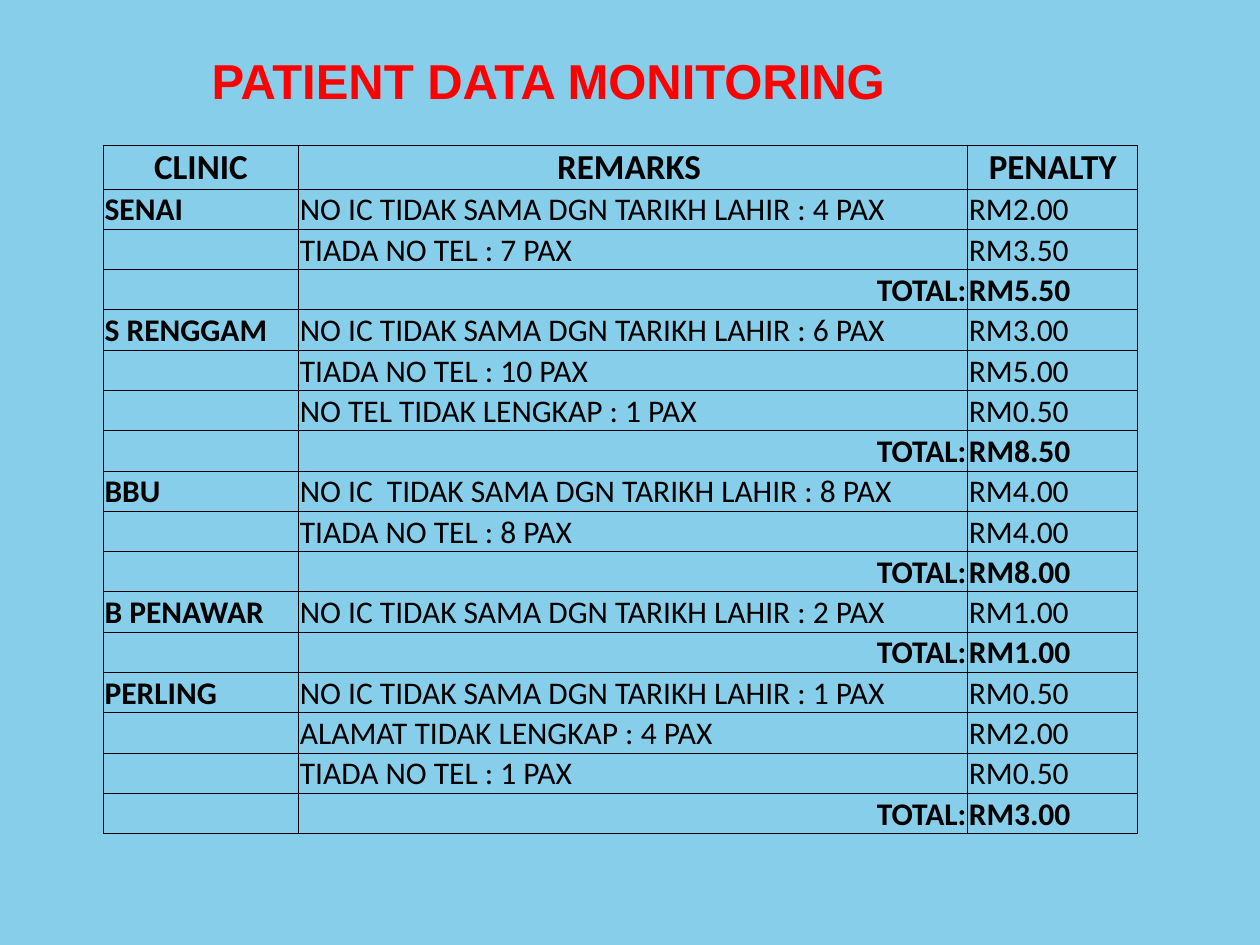
import pptx
import pptx.dml.color
import pptx.enum.text
import pptx.oxml
import pptx.oxml.ns
import pptx.util
from pptx.util import Inches

ALIGN = pptx.enum.text.PP_ALIGN
ANCHOR = pptx.enum.text.MSO_ANCHOR

SKY, RED, BLACK = "87CEEB", "FF0000", "000000"
WIDTH, HEIGHT = 10, 7.5
COLUMNS = [1.55, 5.31, 1.35]
ROW_HEIGHT = 0.32
PENALTY_PER_PAX = 0.5

HEADINGS = ["CLINIC", "REMARKS ", "PENALTY"]
BIRTH_DATE = "NO IC TIDAK SAMA DGN TARIKH LAHIR"
NO_PHONE = "TIADA NO TEL"

# Each clinic with its remarks and the number of patients (pax)
CLINICS = [
    ("SENAI", [(BIRTH_DATE, 4), (NO_PHONE, 7)]),
    ("S RENGGAM", [(BIRTH_DATE, 6), (NO_PHONE, 10), ("NO TEL TIDAK LENGKAP", 1)]),
    ("BBU", [("NO IC  TIDAK SAMA DGN TARIKH LAHIR", 8), (NO_PHONE, 8)]),
    ("B PENAWAR", [(BIRTH_DATE, 2)]),
    ("PERLING", [(BIRTH_DATE, 1), ("ALAMAT TIDAK LENGKAP", 4), (NO_PHONE, 1)]),
]


def rgb(value):
    return pptx.dml.color.RGBColor.from_string(value)


def set_font(font, name, size, color, bold):
    font.name = name
    font.size = pptx.util.Pt(size)
    font.bold = bold
    font.color.rgb = rgb(color)


def ringgit(pax):
    return f"RM{pax * PENALTY_PER_PAX:.2f}"


def table_rows():
    """Return (texts, is_total) for every row below the headings."""
    rows = []
    for clinic, remarks in CLINICS:
        for i, (remark, pax) in enumerate(remarks):
            name = clinic if i == 0 else ""
            rows.append(([name, f"{remark} : {pax} PAX", ringgit(pax)], False))
        total = sum(pax for _, pax in remarks)
        rows.append((["", "TOTAL:", ringgit(total)], True))
    return rows


def add_title(s, text):
    sp = s.shapes.title
    sp.left, sp.top = Inches(1.58), Inches(0.35)
    sp.width, sp.height = Inches(6.59), Inches(0.57)
    tf = sp.text_frame
    tf.text = text
    tf.word_wrap = True
    tf.auto_size = pptx.enum.text.MSO_AUTO_SIZE.NONE
    tf.vertical_anchor = ANCHOR.TOP
    p = tf.paragraphs[0]
    p.alignment = ALIGN.LEFT
    set_font(p.runs[0].font, "Arial", 28, RED, True)


def add_borders(cell, color, points):
    tc_pr = cell._tc.get_or_add_tcPr()
    for side in "LRTB":
        tc_pr.append(pptx.oxml.parse_xml(
            f'<a:ln{side} {pptx.oxml.ns.nsdecls("a")} w="{pptx.util.Pt(points)}">'
            f'<a:solidFill><a:srgbClr val="{color}"/></a:solidFill></a:ln{side}>'))


def fill_cell(cell, text, size, bold, align):
    cell.margin_left = cell.margin_right = cell.margin_top = Inches(0.01)
    cell.margin_bottom = 0
    cell.vertical_anchor = ANCHOR.BOTTOM
    add_borders(cell, BLACK, 0.5)
    cell.fill.background()
    p = cell.text_frame.paragraphs[0]
    p.alignment = align
    if text:
        p.text = text
        set_font(p.runs[0].font, "Calibri", size, BLACK, bold)
    else:
        p.font.size = pptx.util.Pt(size)


def add_penalty_table(s):
    rows = table_rows()
    count = len(rows) + 1
    table = s.shapes.add_table(
        count, len(COLUMNS), Inches(0.82), Inches(1.15),
        Inches(sum(COLUMNS)), Inches(count * ROW_HEIGHT)).table
    table.first_row = table.horz_banding = False
    for column, width in zip(table.columns, COLUMNS):
        column.width = Inches(width)
    for row in table.rows:
        row.height = Inches(ROW_HEIGHT)

    for c, heading in enumerate(HEADINGS):
        fill_cell(table.cell(0, c), heading, 20, True, ALIGN.CENTER)
    for r, (texts, is_total) in enumerate(rows, start=1):
        for c, text in enumerate(texts):
            align = ALIGN.RIGHT if is_total and c == 1 else ALIGN.LEFT
            fill_cell(table.cell(r, c), text, 18, is_total or c == 0, align)


def main():
    prs = pptx.Presentation()
    prs.slide_width, prs.slide_height = Inches(WIDTH), Inches(HEIGHT)
    s = prs.slides.add_slide(prs.slide_layouts[5])
    s.background.fill.solid()
    s.background.fill.fore_color.rgb = rgb(SKY)
    add_title(s, "PATIENT DATA MONITORING")
    add_penalty_table(s)
    prs.save("out.pptx")


if __name__ == "__main__":
    main()
